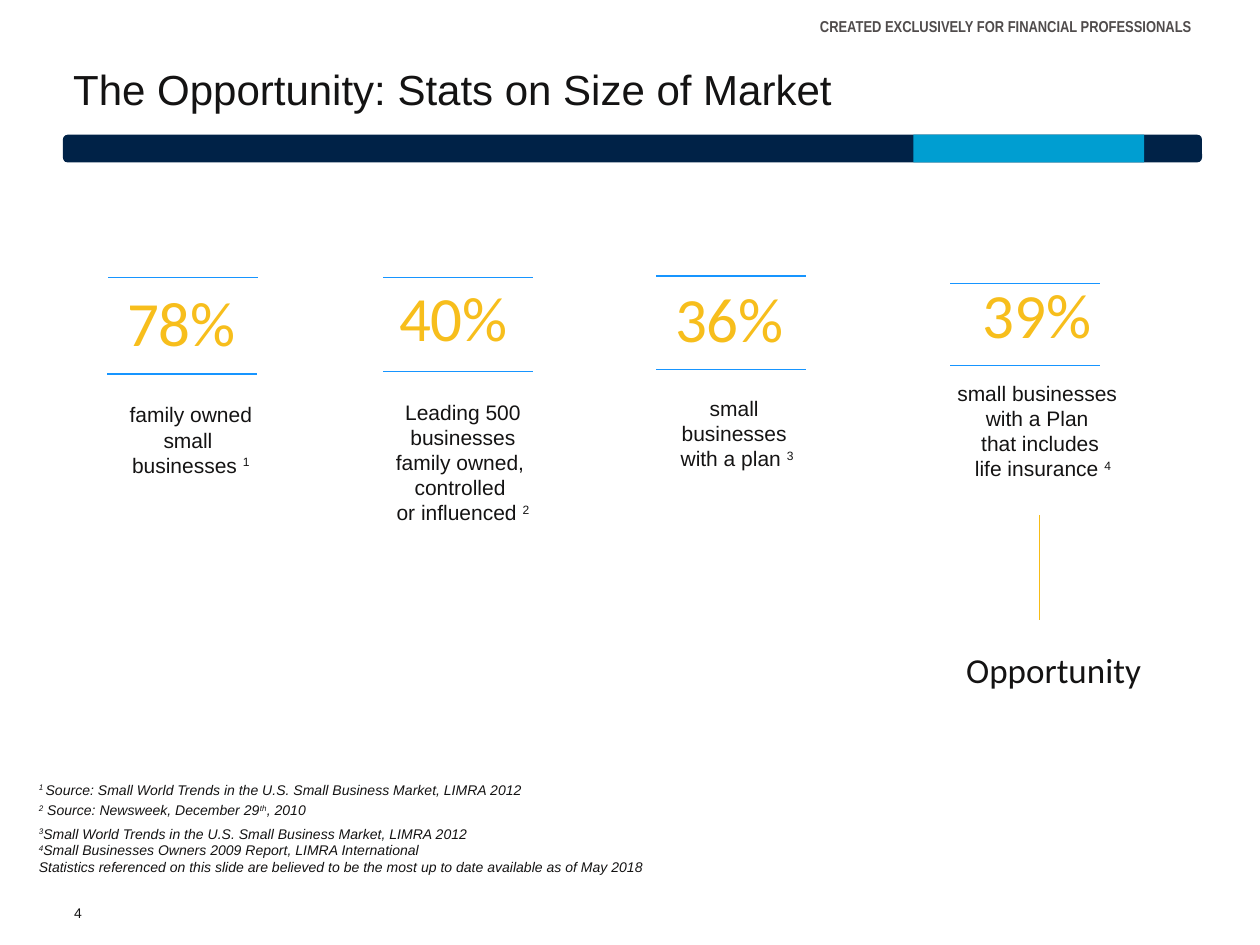
from dataclasses import dataclass

import pptx
import pptx.dml.color
import pptx.enum.shapes
import pptx.enum.text
import pptx.oxml.ns
import pptx.util
from lxml import etree

Pt = pptx.util.Pt
SHAPES = pptx.enum.shapes.MSO_SHAPE
ALIGN = pptx.enum.text.PP_ALIGN
ANCHOR = pptx.enum.text.MSO_ANCHOR
FIT = pptx.enum.text.MSO_AUTO_SIZE

INK, NAVY, CYAN, BLUE, GOLD = "141313", "002247", "009ED1", "1795FF", "F7BE1C"

HEADER = {"name": "Arial Narrow", "size": Pt(9), "bold": True, "color": "504C4C"}
TITLE = {"name": "Arial", "size": Pt(24), "bold": False, "color": INK}
FIGURE = {"name": "Calibri", "size": Pt(36), "color": GOLD}
CAPTION = {"name": "Arial", "size": Pt(12), "color": INK}
CALLOUT = {"name": "Calibri", "size": Pt(20), "color": INK}
NOTE = {"name": "Arial", "size": Pt(8), "italic": True, "color": INK}
NUMBER = {"name": "Arial", "size": Pt(8), "color": INK}


@dataclass
class Box:
    left: float
    top: float
    width: float
    height: float

    def lengths(self) -> list:
        return [Pt(v) for v in (self.left, self.top, self.width, self.height)]


@dataclass
class Stat:
    figure: str
    figure_box: Box
    caption: list[str]  # superscripts stand between carets
    caption_box: Box
    rule_lefts: tuple[float, float]
    rule_tops: tuple[float, float]


RULE_WIDTH = 85.7
STATS = [
    Stat("78%", Box(65.5, 158.4, 77.8, 51),
         ["family owned", "small ", "businesses ^1^"],
         Box(45.4, 226.1, 127.4, 51), (61.9, 61.2), (158.4, 213.8)),
    Stat("40%", Box(221, 155.5, 81.4, 51),
         ["Leading 500", "businesses", "family owned, ", "controlled ",
          "or influenced ^2^"],
         Box(218.9, 224.6, 91.4, 80), (218.9, 218.9), (158.4, 212.4)),
    Stat("36%", Box(378.7, 156.2, 79.2, 51),
         ["small ", "businesses ", "with a plan ^3^"],
         Box(380.2, 222.5, 82, 51), (375.1, 375.1), (157.7, 211)),
    Stat("39%", Box(554.4, 154.1, 79.2, 51),
         ["small businesses ", "with a Plan ", "that includes",
          " life insurance ^4^"],
         Box(539.3, 213.8, 110.2, 80), (542.9, 542.9), (162, 208.8)),
]


def rgb(color: str) -> pptx.dml.color.RGBColor:
    return pptx.dml.color.RGBColor.from_string(color)


def format_font(font, style: dict) -> None:
    for key, value in style.items():
        if key == "color":
            font.color.rgb = rgb(value)
        else:
            setattr(font, key, value)


def fill_text(tf, lines: list[str], style: dict, align=ALIGN.LEFT,
              gap: float = 0) -> None:
    for i, line in enumerate(lines):
        p = tf.paragraphs[0] if i == 0 else tf.add_paragraph()
        p.alignment = align
        p.space_before = Pt(gap if i else 0)
        for j, part in enumerate(line.split("^")):
            if not part:
                continue
            r = p.add_run()
            r.text = part
            format_font(r.font, style)
            if j % 2:
                r._r.get_or_add_rPr().set("baseline", "30000")


def add_text(s, box: Box, lines: list[str], style: dict, align=ALIGN.LEFT,
             wrap: bool = True, gap: float = 0):
    tf = s.shapes.add_textbox(*box.lengths()).text_frame
    tf.word_wrap = wrap
    tf.auto_size = FIT.SHAPE_TO_FIT_TEXT
    fill_text(tf, lines, style, align, gap)
    return tf


def add_bar(s, kind, box: Box, color: str):
    sp = s.shapes.add_shape(kind, *box.lengths())
    sp.shadow.inherit = False
    sp.fill.solid()
    sp.fill.fore_color.rgb = rgb(color)
    sp.line.fill.background()
    return sp


def add_line(s, x1: float, y1: float, x2: float, y2: float, color: str) -> None:
    line = s.shapes.add_connector(pptx.enum.shapes.MSO_CONNECTOR.STRAIGHT,
                                  Pt(x1), Pt(y1), Pt(x2), Pt(y2))
    line.line.color.rgb = rgb(color)
    line.line.width = Pt(0.75)
    etree.SubElement(line._element.spPr, pptx.oxml.ns.qn("a:effectLst"))


def add_stat(s, stat: Stat) -> None:
    for left, top in zip(stat.rule_lefts, stat.rule_tops):
        add_line(s, left, top, left + RULE_WIDTH, top, BLUE)
    add_text(s, stat.figure_box, [stat.figure], FIGURE, wrap=False)
    add_text(s, stat.caption_box, stat.caption, CAPTION, ALIGN.CENTER,
             wrap=stat is STATS[0])


def main() -> None:
    prs = pptx.Presentation()
    prs.slide_width, prs.slide_height = Pt(720), Pt(540)
    s = prs.slides.add_slide(prs.slide_layouts[5])

    # Header line and bar
    tf = add_text(s, Box(461.5, 1.4, 257, 27.4),
                  ["CREATED EXCLUSIVELY FOR FINANCIAL PROFESSIONALS"], HEADER)
    tf.auto_size = FIT.NONE
    tf.vertical_anchor = ANCHOR.MIDDLE
    bar = add_bar(s, SHAPES.ROUNDED_RECTANGLE, Box(36, 77, 650.9, 15.8), NAVY)
    bar.adjustments[0] = 0.167
    add_bar(s, SHAPES.RECTANGLE, Box(522, 77, 131.8, 15.8), CYAN)

    # Title
    title = s.shapes.title
    title.left, title.top, title.width, title.height = Box(
        34.6, 32.4, 458.6, 36).lengths()
    tf = title.text_frame
    tf.word_wrap = False
    tf.auto_size = FIT.SHAPE_TO_FIT_TEXT
    tf.vertical_anchor = ANCHOR.TOP
    fill_text(tf, ["The Opportunity: Stats on Size of Market"], TITLE)

    # Statistics
    for stat in STATS:
        add_stat(s, stat)

    # Callout under the last statistic
    add_line(s, 594, 294.5, 594, 354.2, "F7BC16")
    add_text(s, Box(545, 367.2, 118.1, 31.7), ["Opportunity"], CALLOUT, wrap=False)

    # Sources and slide number
    add_text(s, Box(15.1, 442.8, 360, 28.8), [
        "^1 ^Source: Small World Trends in the U.S. Small Business Market, LIMRA 2012",
        "^2^ Source: Newsweek, December 29^th^, 2010",
    ], NOTE, gap=2)
    add_text(s, Box(15.1, 468, 552.2, 36), [
        "^3^Small World Trends in the U.S. Small Business Market, LIMRA 2012",
        "^4^Small Businesses Owners 2009 Report, LIMRA International",
        "Statistics referenced on this slide are believed to be the most up to date "
        "available as of May 2018",
    ], NOTE)
    add_text(s, Box(35.3, 513.4, 18.7, 17.3), ["4"], NUMBER)

    prs.save("out.pptx")


if __name__ == "__main__":
    main()
